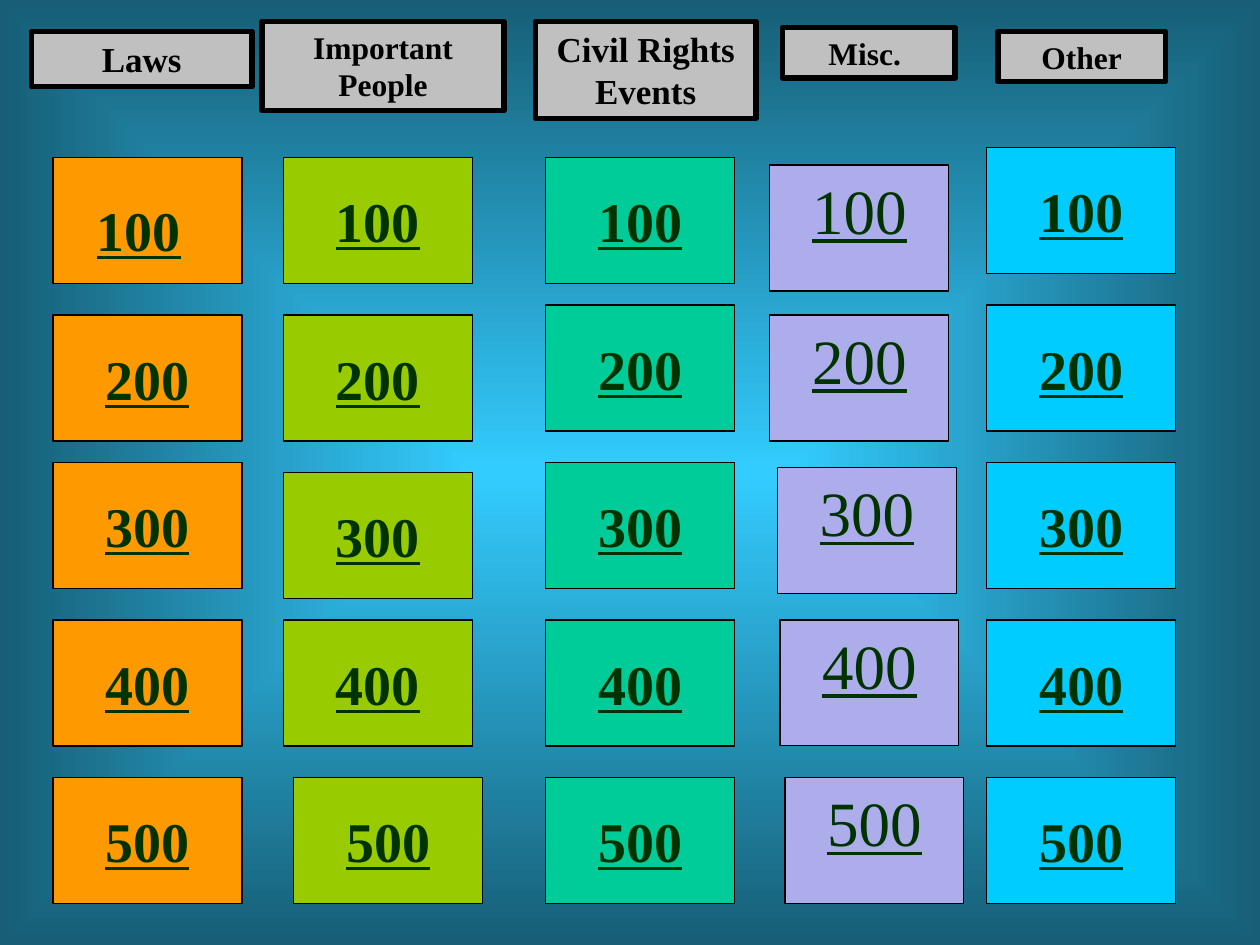
from dataclasses import dataclass

from lxml import etree
from pptx import Presentation
from pptx.dml.color import RGBColor
from pptx.enum.shapes import MSO_SHAPE
from pptx.enum.text import MSO_ANCHOR, MSO_AUTO_SIZE, PP_ALIGN
from pptx.oxml.ns import qn
from pptx.util import Inches, Pt

BUTTON = MSO_SHAPE.ACTION_BUTTON_CUSTOM
RECTANGLE = MSO_SHAPE.RECTANGLE
TOP, MIDDLE = MSO_ANCHOR.TOP, MSO_ANCHOR.MIDDLE
LEFT, CENTER = PP_ALIGN.LEFT, PP_ALIGN.CENTER
FIT_TEXT = MSO_AUTO_SIZE.SHAPE_TO_FIT_TEXT


@dataclass(frozen=True)
class Theme:
    font: str = "Times New Roman"
    glow: str = "33CCFF"
    edge: str = "175E76"
    black: str = "000000"
    header: str = "C0C0C0"
    points: str = "003300"
    points_size: int = 32
    misc_size: int = 36
    header_line: float = 3
    tile_line: float = 0.75


THEME = Theme()
TILE_HEIGHT = 1

# Heading: text, box, size; tiles: fill, width, (left, top) from 100 to 500
CATEGORIES = [
    dict(heading="Laws", box=(0.25, 0.25, 1.75, 0.44), size=20,
         fill="FF9900", width=1.5,
         spots=[(0.42, top) for top in (1.25, 2.5, 3.67, 4.92, 6.17)]),
    dict(heading="Important People", box=(2.08, 0.17, 1.92, 0.71), size=18,
         fill="99CC00", width=1.5,
         spots=[(2.25, 1.25), (2.25, 2.5), (2.25, 3.75), (2.25, 4.92), (2.33, 6.17)]),
    dict(heading="Civil Rights Events", box=(4.25, 0.17, 1.75, 0.77), size=20,
         fill="00CC99", width=1.5,
         spots=[(4.33, top) for top in (1.25, 2.42, 3.67, 4.92, 6.17)]),
    dict(heading="Misc. ", box=(6.21, 0.22, 1.37, 0.4), size=18,
         fill="ADADEB", width=1.42,
         spots=[(6.11, 1.31), (6.11, 2.5), (6.17, 3.71), (6.19, 4.92), (6.23, 6.17)]),
    dict(heading="Other", box=(7.92, 0.25, 1.33, 0.4), size=18,
         fill="00CCFF", width=1.5,
         spots=[(7.83, top) for top in (1.17, 2.42, 3.67, 4.92, 6.17)]),
]


def paint_background(slide):
    """Glow from the centre towards the slide edges."""
    fill = slide.background.fill
    fill.gradient()
    for stop, color in zip(fill.gradient_stops, (THEME.glow, THEME.edge)):
        stop.color.rgb = RGBColor.from_string(color)
    gradient = next(slide.element.iter(qn("a:gradFill")))
    gradient.remove(gradient.find(qn("a:lin")))
    shading = etree.SubElement(gradient, qn("a:path"), {"path": "shape"})
    etree.SubElement(shading, qn("a:fillToRect"), dict.fromkeys("ltrb", "50000"))


def write(holder, text, font_format, align=CENTER, **frame_format):
    frame = holder.text_frame
    for name, value in frame_format.items():
        setattr(frame, name, value)
    paragraph = frame.paragraphs[0]
    paragraph.alignment = align
    run = paragraph.add_run()
    run.text = text
    color = font_format["color"]
    run.font.color.rgb = RGBColor.from_string(color)
    for name, value in font_format.items():
        if name != "color":
            setattr(run.font, name, value)


def add_box(slide, preset, box, fill, line_width):
    shape = slide.shapes.add_shape(preset, *map(Inches, box))
    shape.shadow.inherit = False
    shape.fill.solid()
    shape.fill.fore_color.rgb = RGBColor.from_string(fill)
    shape.line.color.rgb = RGBColor.from_string(THEME.black)
    shape.line.width = Pt(line_width)
    return shape


def points_font(size, bold):
    return dict(name=THEME.font, size=Pt(size), bold=bold, underline=True,
                color=THEME.points)


def add_heading(slide, category):
    heading = add_box(slide, RECTANGLE, category["box"], THEME.header, THEME.header_line)
    font = dict(name=THEME.font, size=Pt(category["size"]), bold=True, color=THEME.black)
    write(heading, category["heading"], font,
          vertical_anchor=TOP, word_wrap=True, auto_size=FIT_TEXT)


def add_tiles(slide, category):
    is_misc = category["heading"].startswith("Misc")
    for step, (left, top) in enumerate(category["spots"], start=1):
        tile = add_box(slide, RECTANGLE if is_misc else BUTTON,
                       (left, top, category["width"], TILE_HEIGHT),
                       category["fill"], THEME.tile_line)
        points = str(step * 100)
        if is_misc:
            write(tile, points, points_font(THEME.misc_size, False),
                  vertical_anchor=TOP, word_wrap=True)
        elif category["heading"] == "Laws" and step == 1:
            # The first Laws tile carries its points in a separate label
            label = slide.shapes.add_textbox(*map(Inches, (0.67, 1.5, 0.92, 0.63)))
            write(label, points, points_font(THEME.points_size, True), LEFT,
                  word_wrap=True, auto_size=FIT_TEXT)
        else:
            write(tile, points, points_font(THEME.points_size, True),
                  vertical_anchor=MIDDLE, word_wrap=False)


def main():
    deck = Presentation()
    deck.slide_width, deck.slide_height = Inches(10), Inches(7.5)
    board = deck.slides.add_slide(deck.slide_layouts.get_by_name("Blank"))
    paint_background(board)
    for category in CATEGORIES:
        add_heading(board, category)
        add_tiles(board, category)
    deck.save("out.pptx")


if __name__ == "__main__":
    main()
